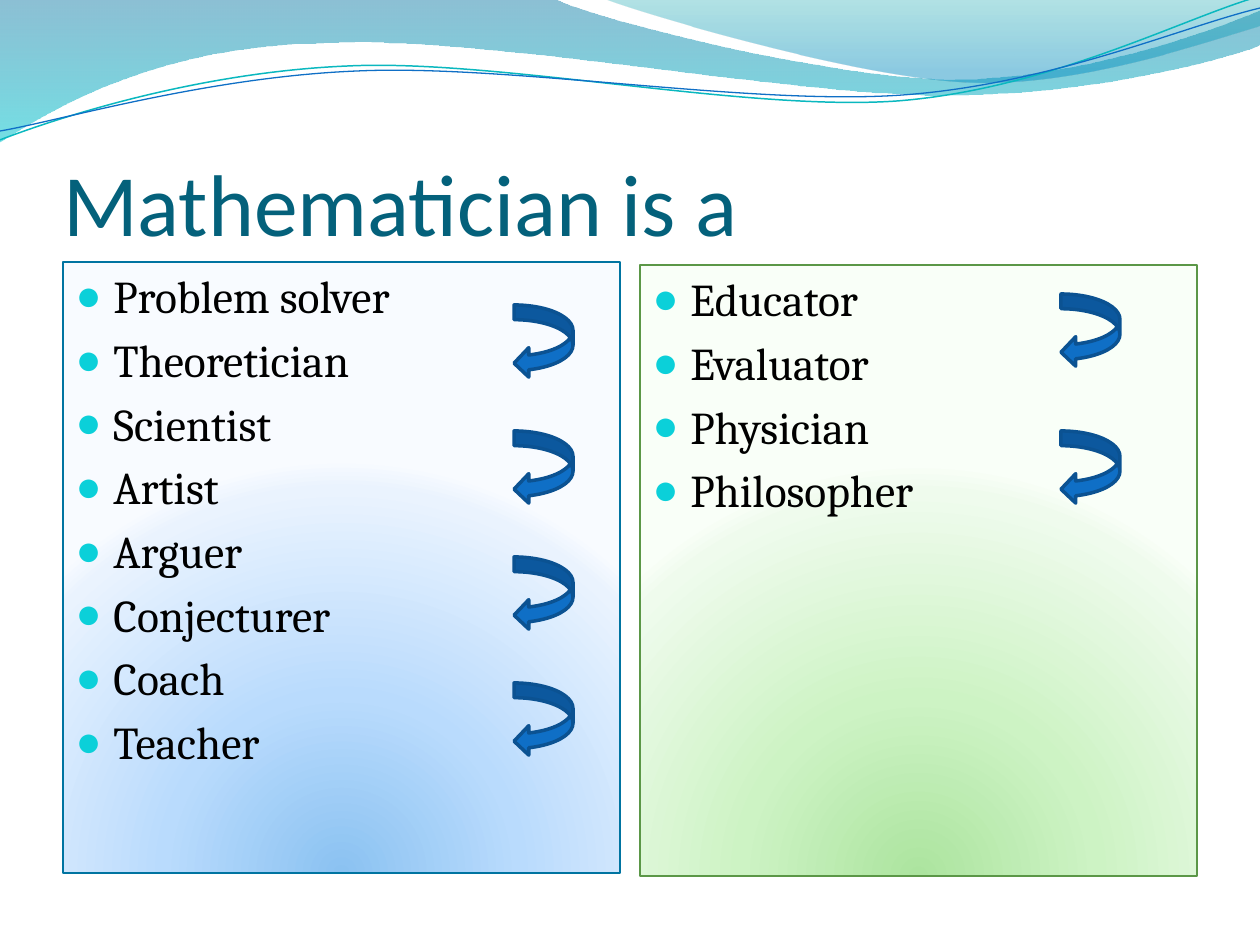
import math
from dataclasses import dataclass

from pptx import Presentation
from pptx import util as u
from pptx.dml.color import RGBColor
from pptx.enum import shapes, text
from pptx.oxml import parse_xml
from pptx.oxml.ns import nsdecls, qn

EMU = 914400 / 126


def px(n):
    return u.Emu(round(n * EMU))


def rgb(code):
    return RGBColor.from_string(code)


@dataclass(frozen=True)
class Theme:
    head: str = "04617B"
    ink: str = "000000"
    dot: str = "0BD0D9"
    arrow: str = "0F6FC6"
    edge: str = "0B5292"
    teal: str = "0AB8BF"
    title_font: str = "Calibri"
    body_font: str = "Cambria"
    title_size: int = 50
    body_size: int = 26


@dataclass(frozen=True)
class Panel:
    stops: tuple
    line: str


BLUE = Panel(((0, "8BC2F1", 100), (43, "B9DBFD", 100), (93, "EAF3FE", 100), (100, "F8FBFF", 100)),
             "0074A1")
GREEN = Panel(((0, "ACE49F", 100), (43, "CDF3C4", 100), (93, "EFFBED", 100), (100, "F9FFF8", 100)),
              "5B9747")
DOWN = '<a:lin ang="5400000" scaled="0"/>'
ROUND = '<a:path path="circle"><a:fillToRect l="50000" t="130000" r="50000" b="-30000"/></a:path>'


def spin(point, hub, angle):
    x, y = point[0] - hub[0], point[1] - hub[1]
    c, s = math.cos(math.radians(angle)), math.sin(math.radians(angle))
    return hub[0] + x * c - y * s, hub[1] + x * s + y * c


class Deck:
    def __init__(self, theme):
        self.theme = theme
        self.show = Presentation()
        self.show.slide_width, self.show.slide_height = px(1260), px(945)
        self.slide = self.show.slides.add_slide(self.show.slide_layouts[3])

    def place(self, idx, box):
        holder = self.slide.placeholders[idx]
        holder.left, holder.top, holder.width, holder.height = map(px, box)
        tree = holder.element.getparent()
        tree.append(holder.element)
        holder.text_frame.auto_size = text.MSO_AUTO_SIZE.NONE
        return holder

    def style(self, para, font, size, color):
        para.alignment = text.PP_ALIGN.LEFT
        para.font.name, para.font.size = font, u.Pt(size)
        para.font.color.rgb = rgb(color)

    def blend(self, shape, stops, path):
        shape.fill.gradient()
        old = shape.element.spPr.find(qn("a:gradFill"))
        marks = "".join(
            f'<a:gs pos="{pos * 1000}"><a:srgbClr val="{color}">'
            + (f'<a:alpha val="{alpha * 1000}"/>' if alpha < 100 else "")
            + "</a:srgbClr></a:gs>"
            for pos, color, alpha in stops)
        old.getparent().replace(old, parse_xml(
            f'<a:gradFill {nsdecls("a")} rotWithShape="1"><a:gsLst>{marks}</a:gsLst>{path}</a:gradFill>'))

    def outline(self, shape, color, width):
        shape.line.color.rgb = rgb(color)
        shape.line.width = u.Pt(width)

    def wave(self, start, steps, close):
        spots = [(px(x), px(y)) for step in steps for x, y in step]
        pen = self.slide.shapes.build_freeform(px(start[0]), px(start[1]), scale=1.0)
        pen.add_line_segments(spots, close=close)
        shape = pen.convert_to_shape()
        shape.shadow.inherit = False
        sides = iter(list(shape.element.iter(qn("a:lnTo"))))
        for step in steps:
            group = [next(sides) for point in step]
            if len(group) == 3:
                bend = parse_xml(f'<a:cubicBezTo {nsdecls("a")}/>')
                group[0].addprevious(bend)
                for side in group:
                    bend.append(side[0])
                    side.getparent().remove(side)
        return shape

    def band(self, start, steps, stops):
        shape = self.wave(start, steps, True)
        self.blend(shape, stops, DOWN)
        shape.line.fill.background()

    def stroke(self, start, steps, hub, color, width):
        tilt = 2.7
        flat = [[spin(point, hub, tilt) for point in step] for step in steps]
        shape = self.wave(spin(start, hub, tilt), flat, False)
        shape.rotation = 360 - tilt
        shape.fill.background()
        self.outline(shape, color, width)

    def title(self, words, box):
        frame = self.place(0, box).text_frame
        frame.margin_left = frame.margin_right = frame.margin_bottom = 0
        frame.margin_top = u.Inches(0.05)
        frame.vertical_anchor = text.MSO_ANCHOR.BOTTOM
        frame.text = words
        self.style(frame.paragraphs[0], self.theme.title_font, self.theme.title_size, self.theme.head)

    def bullet(self, para):
        props = para._p.get_or_add_pPr()
        props.set("marL", str(u.Inches(0.3)))
        props.set("indent", str(u.Inches(-0.3)))
        for part in (f'buClr {nsdecls("a")}><a:srgbClr val="{self.theme.dot}"/></a:buClr',
                     f'buSzPct {nsdecls("a")} val="95000"/',
                     f'buChar {nsdecls("a")} char="●"/'):
            props.append(parse_xml(f"<a:{part}>"))

    def list(self, idx, words, box, panel):
        holder = self.place(idx, box)
        self.blend(holder, panel.stops, ROUND)
        self.outline(holder, panel.line, 0.75)
        holder.text_frame.text = "\n".join(words)
        for para in holder.text_frame.paragraphs:
            self.bullet(para)
            self.style(para, self.theme.body_font, self.theme.body_size, self.theme.ink)

    def arrow(self, x, y):
        shape = self.slide.shapes.add_shape(
            shapes.MSO_SHAPE.CURVED_LEFT_ARROW, px(x), px(y), px(59), px(73))
        shape.shadow.inherit = False
        shape.fill.solid()
        shape.fill.fore_color.rgb = rgb(self.theme.arrow)
        self.outline(shape, self.theme.edge, 2)


def main():
    theme = Theme()
    deck = Deck(theme)
    deck.band((0, 0), [
        [(554, -1)],
        [(600, 21), (837, 79), (955, 79)],
        [(1075, 79), (1207, 33), (1260, 11)],
        [(1261, 45)],
        [(1239, 55), (1096, 96), (940, 95)],
        [(784, 95), (481, 35), (324, 43)],
        [(163, 45), (58, 105), (-1, 142)],
        [(0, 0)],
    ], [(0, "0074A1", 45), (100, "00C6CF", 55)])
    deck.band((604, -1), [
        [(641, 14), (859, 78), (969, 82)],
        [(1079, 87), (1211, 40), (1260, 26)],
        [(1260, 0)],
        [(604, -1)],
    ], [(0, "00A1A9", 30), (80, "008BBF", 45)])
    deck.stroke((0, 140), [
        [(60, 117), (199, 72), (349, 66)],
        [(498, 59), (747, 112), (898, 101)],
        [(1049, 89), (1182, 19), (1257, -3)],
    ], (629, 72), theme.teal, 0.85)
    deck.stroke((0, 131), [
        [(59, 121), (207, 77), (357, 71)],
        [(508, 64), (752, 106), (903, 95)],
        [(1053, 84), (1184, 26), (1260, 8)],
    ], (629, 74), theme.arrow, 0.75)

    deck.title("Mathematician is a", (63, 97, 1134, 157))
    deck.list(1, ["Problem solver", "Theoretician", "Scientist", "Artist",
                  "Arguer", "Conjecturer", "Coach", "Teacher"], (63, 262, 557, 611), BLUE)
    deck.list(2, ["Educator", "Evaluator", "Physician", "Philosopher"], (640, 265, 557, 611), GREEN)
    for row in range(4):
        deck.arrow(514, 305 + 126 * row)
    for y in (294, 431):
        deck.arrow(1061, y)
    deck.show.save("out.pptx")


if __name__ == "__main__":
    main()
